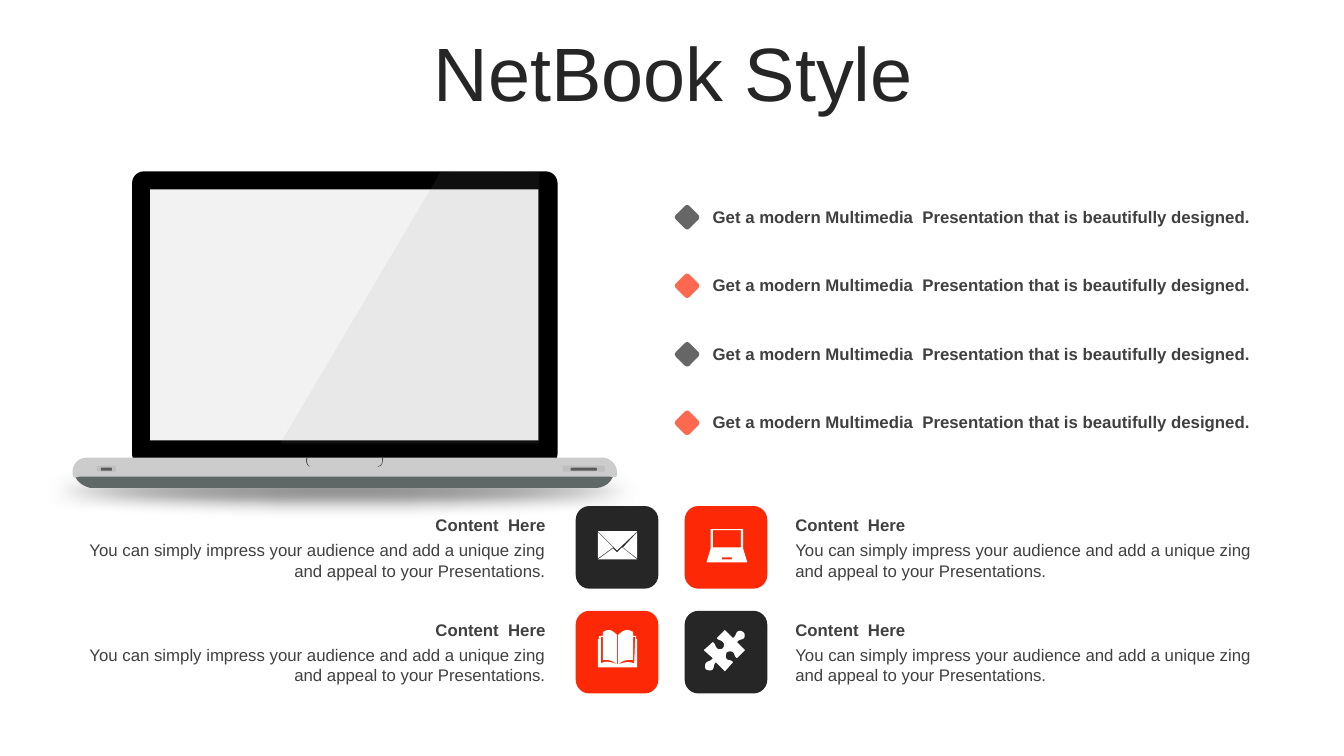
from lxml import etree
from pptx import Presentation
from pptx.dml.color import RGBColor
from pptx.enum.shapes import MSO_SHAPE
from pptx.enum.text import MSO_ANCHOR, PP_ALIGN
from pptx.oxml.ns import qn
from pptx.util import Inches, Pt

ROUNDED, RECTANGLE, OVAL = MSO_SHAPE.ROUNDED_RECTANGLE, MSO_SHAPE.RECTANGLE, MSO_SHAPE.OVAL
TOP, MIDDLE = MSO_ANCHOR.TOP, MSO_ANCHOR.MIDDLE
LEFT, CENTER, RIGHT = PP_ALIGN.LEFT, PP_ALIGN.CENTER, PP_ALIGN.RIGHT

DARK = RGBColor(0x26, 0x26, 0x26)
RED = RGBColor(0xFD, 0x29, 0x06)
BODY_TEXT = RGBColor(0x40, 0x40, 0x40)
WHITE = RGBColor(0xFF, 0xFF, 0xFF)
BLACK = RGBColor(0x00, 0x00, 0x00)
FLOOR_SHADOW = RGBColor(0x80, 0x80, 0x80)
FOOT = RGBColor(0x5F, 0x67, 0x67)
SCREEN = RGBColor(0xF2, 0xF2, 0xF2)
BASE = RGBColor(0xCC, 0xCC, 0xCC)
NOTCH = RGBColor(0x4D, 0x4D, 0x4D)
PORT = RGBColor(0xBF, 0xBF, 0xBF)
SLOT = RGBColor(0x59, 0x59, 0x59)
GLARE = RGBColor(0x99, 0x99, 0x99)

FONT = "Arial"
FEATURE = "Get a modern Multimedia  Presentation that is beautifully designed."
HEADING = "Content  Here"
BODY = ("You can simply impress your audience and add a unique zing "
        "and appeal to your Presentations.")

# Outlines in inches: M = move, L = line, C = cubic curve, Z = close
FOOT_PATH = ("M 5.23 3.16 C 5.23 3.16 5.34 3.15 5.38 3.05 L 5.38 3 L .05 3.02 L .05 3.06 "
             "C .09 3.13 .16 3.15 .19 3.16 Z")
BASE_PATH = ("M .16 2.86 L 5.28 2.86 C 5.35 2.86 5.42 2.93 5.42 3 L 5.42 3.03 "
             "C 5.42 3.06 5.4 3.05 5.36 3.05 L .08 3.05 C .05 3.06 .02 3.06 .02 3.03 "
             "L .02 3 C .02 2.92 .08 2.86 .16 2.86 Z")
NOTCH_PATH = ("M 3.09 2.86 L 3.1 2.86 C 3.1 2.94 3.07 2.95 3.04 2.95 "
              "C 3.07 2.94 3.1 2.93 3.09 2.86 Z "
              "M 2.34 2.86 L 2.35 2.86 C 2.35 2.86 2.33 2.93 2.38 2.95 "
              "C 2.32 2.94 2.34 2.86 2.34 2.86 Z")
GLARE_PATH = "M 3.68 .01 L 4.65 .02 L 4.65 2.72 L 2.08 2.72 Z"
ENVELOPE = ("M .46 .41 L .61 .53 L .22 .53 L .37 .42 L .41 .46 Z "
            "M .61 .26 L .61 .52 L .47 .41 Z M .22 .26 L .37 .41 L .22 .52 Z "
            "M .22 .25 L .61 .25 L .41 .44 Z")
COMPUTER = ("M .37 .51 L .37 .53 L .47 .53 L .47 .51 Z "
            "M .28 .24 L .28 .41 L .56 .41 L .56 .24 Z "
            "M .26 .23 L .58 .23 L .58 .42 L .62 .55 L .62 .56 L .22 .56 L .22 .55 L .26 .42 Z")
BOOK = ("M .41 .53 L .42 .53 C .49 .51 .52 .5 .58 .52 L .59 .26 L .57 .26 L .57 .49 "
        "C .52 .48 .47 .49 .42 .53 L .42 .24 C .45 .21 .48 .19 .51 .19 "
        "C .53 .19 .55 .2 .57 .21 L .57 .25 L .6 .25 L .6 .28 L .61 .28 L .61 .56 "
        "L .22 .56 L .22 .28 L .23 .28 L .23 .25 L .27 .25 L .27 .21 "
        "C .29 .2 .31 .19 .32 .19 C .36 .19 .38 .21 .41 .24 L .41 .53 "
        "C .36 .49 .31 .48 .27 .49 L .27 .26 L .25 .26 L .25 .52 C .31 .49 .35 .51 .41 .53 Z")
PUZZLE = ("M .58 .21 C .6 .22 .6 .25 .59 .27 C .57 .29 .54 .28 .52 .31 L .6 .39 L .52 .47 "
          "C .49 .45 .5 .43 .48 .41 C .46 .4 .44 .4 .42 .41 C .41 .43 .4 .46 .42 .48 "
          "C .45 .5 .46 .48 .48 .51 L .4 .6 L .31 .51 C .28 .54 .3 .55 .28 .58 "
          "C .26 .6 .23 .59 .21 .58 C .2 .56 .2 .54 .21 .52 C .23 .49 .25 .51 .28 .47 "
          "L .19 .39 L .28 .31 C .31 .33 .3 .35 .32 .37 C .34 .39 .37 .38 .38 .37 "
          "C .39 .36 .4 .33 .38 .31 C .35 .28 .34 .3 .32 .27 L .4 .19 L .48 .27 "
          "C .51 .25 .5 .24 .52 .21 C .54 .19 .57 .2 .58 .21 Z")
CURVE_STEPS = 6


def paint(shape, color, opacity=100):
    shape.shadow.inherit = False
    shape.fill.solid()
    shape.fill.fore_color.rgb = color
    shape.line.fill.background()
    if opacity < 100:
        color_xml = shape.fill._xPr.find(qn("a:solidFill"))[0]
        etree.SubElement(color_xml, qn("a:alpha"), val=str(opacity * 1000))


def add_block(slide, kind, left, top, width, height, color, opacity=100):
    block = slide.shapes.add_shape(kind, Inches(left), Inches(top), Inches(width), Inches(height))
    paint(block, color, opacity)
    return block


def bezier(points):
    """Return points along a cubic curve, without its start."""
    steps = [n / CURVE_STEPS for n in range(1, CURVE_STEPS + 1)]
    return [tuple((1 - t) ** 3 * a + 3 * t * (1 - t) ** 2 * b + 3 * t * t * (1 - t) * c + t ** 3 * d
                  for a, b, c, d in zip(*points)) for t in steps]


def read_contours(path):
    """Turn a path string into a list of point lists."""
    contours = []
    for contour in path.split("Z"):
        points, command, numbers = [], "", []
        for token in contour.split():
            if token in "MLC":
                command, numbers = token, []
                continue
            numbers.append(float(token))
            if len(numbers) == (6 if command == "C" else 2):
                ends = list(zip(numbers[::2], numbers[1::2]))
                points += bezier([points[-1]] + ends) if command == "C" else ends
        if points:
            contours.append(points)
    return contours


def add_outline(slide, path, left, top, color, opacity=100):
    contours = [[(Inches(left + x), Inches(top + y)) for x, y in points]
                for points in read_contours(path)]
    builder = slide.shapes.build_freeform(*contours[0][0])
    for index, points in enumerate(contours):
        if index:
            builder.move_to(*points[0])
        builder.add_line_segments(points[1:], close=True)
    paint(builder.convert_to_shape(), color, opacity)


def add_text(slide, text, left, top, width, height, size=12, color=BODY_TEXT,
             bold=False, align=LEFT, anchor=TOP):
    box = slide.shapes.add_textbox(Inches(left), Inches(top), Inches(width), Inches(height))
    frame = box.text_frame
    frame.word_wrap = True
    frame.vertical_anchor = anchor
    frame.text = text
    paragraph = frame.paragraphs[0]
    paragraph.alignment = align
    font = paragraph.runs[0].font
    font.name, font.size, font.bold = FONT, Pt(size), bold
    font.color.rgb = color
    return paragraph


def add_title(slide, left, top, width, height):
    title = add_text(slide, "NetBook Style", left, top, width, height,
                     size=54, color=DARK, align=CENTER, anchor=MIDDLE)
    title.line_spacing = 0.9


def add_netbook(slide, left, top):
    floor_shadow = add_block(slide, OVAL, left - 1.11, top + 2.91, 7.61, 0.55, FLOOR_SHADOW)
    effects = floor_shadow._element.spPr.find(qn("a:effectLst"))
    etree.SubElement(effects, qn("a:softEdge"), rad=str(Pt(12.5)))

    add_outline(slide, FOOT_PATH, left, top, FOOT)
    lid = add_block(slide, ROUNDED, left + 0.61, top + 0.02, 4.22, 2.92, BLACK)
    lid.adjustments[0] = 0.04
    add_block(slide, RECTANGLE, left + 0.79, top + 0.2, 3.85, 2.49, SCREEN)
    add_outline(slide, BASE_PATH, left, top, BASE)
    add_outline(slide, NOTCH_PATH, left, top, NOTCH)
    for port_left, port_width, inset in ((0.26, 0.19, 0.04), (4.88, 0.42, 0.08)):
        port = add_block(slide, ROUNDED, left + port_left, top + 2.94, port_width, 0.06, PORT)
        slot = add_block(slide, ROUNDED, left + port_left + inset, top + 2.96,
                         port_width - 2 * inset, 0.03, SLOT)
        port.adjustments[0] = slot.adjustments[0] = 0.28
    add_outline(slide, GLARE_PATH, left, top, GLARE, opacity=10)


def add_features(slide, left, top, pitch):
    for row, color in enumerate((DARK, RED, DARK, RED)):
        row_top = top + row * pitch
        diamond = add_block(slide, ROUNDED, left, row_top + 0.06, 0.19, 0.19, color, opacity=70)
        diamond.rotation = 45
        add_text(slide, FEATURE, left + 0.25, row_top, 5.64, 0.3, bold=True)


def add_card(slide, left, top, icon, color, align):
    """Place an icon tile with its text on the side away from the centre."""
    add_block(slide, ROUNDED, left, top, 0.82, 0.82, color)
    add_outline(slide, icon, left, top, WHITE)
    text_left, text_width = (left - 5.04, 4.84) if align == RIGHT else (left + 1, 4.87)
    add_text(slide, HEADING, text_left, top + 0.04, text_width, 0.3,
             bold=True, align=align, anchor=MIDDLE)
    add_text(slide, BODY, text_left, top + 0.29, text_width, 0.5, align=align)


def add_cards(slide, left, top):
    rows = (((ENVELOPE, DARK), (COMPUTER, RED)), ((BOOK, RED), (PUZZLE, DARK)))
    for row, tiles in enumerate(rows):
        for column, (icon, color) in enumerate(tiles):
            add_card(slide, left + column * 1.08, top + row * 1.04, icon, color,
                     (RIGHT, LEFT)[column])


def main():
    deck = Presentation()
    deck.slide_width, deck.slide_height = Inches(13.33), Inches(7.5)
    slide = deck.slides.add_slide(deck.slide_layouts[6])
    add_netbook(slide, 0.7, 1.68)
    add_title(slide, 0.35, 0.37, 12.66, 0.79)
    add_features(slide, 6.72, 2, 0.68)
    add_cards(slide, 5.71, 5.02)
    deck.save("out.pptx")


if __name__ == "__main__":
    main()
